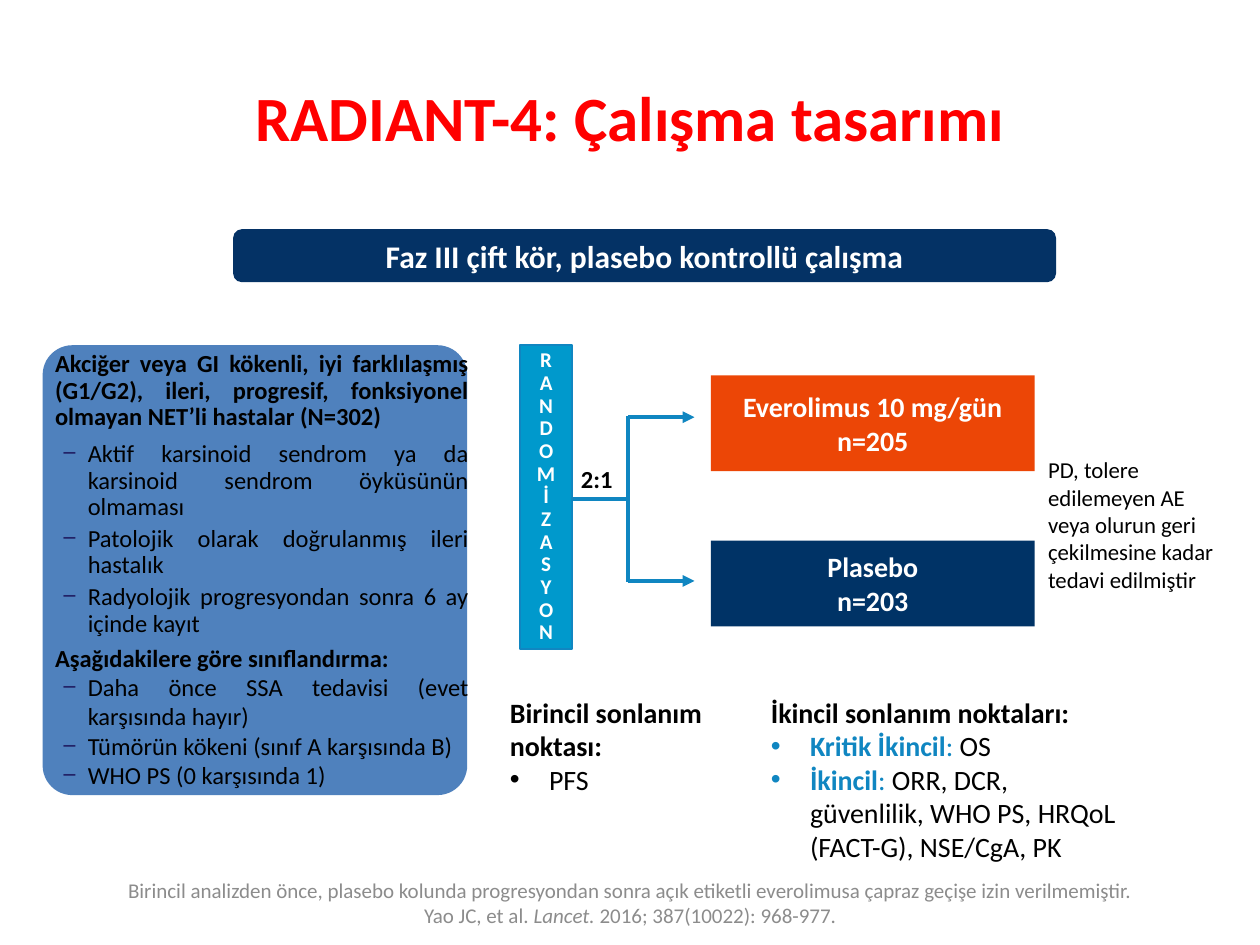
import pptx
import pptx.util
import pptx.dml.color
import pptx.enum.shapes
import pptx.enum.text
import pptx.oxml.ns
from lxml import etree

Cm = pptx.util.Cm
Pt = pptx.util.Pt
ALIGN = pptx.enum.text.PP_ALIGN
ANCHOR = pptx.enum.text.MSO_ANCHOR
SHAPES = pptx.enum.shapes.MSO_SHAPE

COLOURS = {
    "title": "FF0000", "text": "000000", "white": "FFFFFF", "grey": "8C8C8C",
    "panel": "4F81BD", "banner": "043265", "active": "EC4606",
    "placebo": "003366", "random": "0099CC", "line": "1086C1", "dash": "222267",
}


def colour(name):
    return pptx.dml.color.RGBColor.from_string(COLOURS[name])


def set_attributes(target, values):
    for name, value in values.items():
        setattr(target, name, value)


def set_indent(paragraph, left, hanging, bullet=None, bullet_colour="text"):
    """Hanging indent in cm, with an optional bullet character."""
    properties = paragraph._p.get_or_add_pPr()
    properties.set("marL", str(int(Cm(left))))
    properties.set("indent", str(-int(Cm(hanging))))
    if bullet:
        tag = pptx.oxml.ns.qn
        holder = etree.SubElement(properties, tag("a:buClr"))
        etree.SubElement(holder, tag("a:srgbClr"), val=COLOURS[bullet_colour])
        etree.SubElement(properties, tag("a:buFont"), typeface="Arial")
        etree.SubElement(properties, tag("a:buChar"), char=bullet)


def add_run(paragraph, text, size, name="text", **font):
    """Add a run; a newline in the text becomes a line break."""
    for index, line in enumerate(text.split("\n")):
        if index:
            paragraph.add_line_break()
        run = paragraph.add_run()
        run.text = line
        set_attributes(run.font, {"name": "Calibri", "size": Pt(size), **font})
        run.font.color.rgb = colour(name)


def fill_text(shape, paragraphs, size, name="text", anchor=ANCHOR.TOP, wrap=True):
    """Each paragraph is (runs, format, indent); each run is (text, font)."""
    frame = shape.text_frame
    set_attributes(frame, {"word_wrap": wrap, "vertical_anchor": anchor})
    for index, (runs, layout, indent) in enumerate(paragraphs):
        paragraph = frame.add_paragraph() if index else frame.paragraphs[0]
        if indent:
            set_indent(paragraph, *indent)
        set_attributes(paragraph, layout)
        for text, font in runs:
            add_run(paragraph, text, size, **{"name": name, **font})


def centred(text, bold=True):
    return [([(text, {"bold": bold})], {"alignment": ALIGN.CENTER}, None)]


def add_text(slide, box, paragraphs, size, **options):
    shape = slide.shapes.add_textbox(*map(Cm, box))
    fill_text(shape, paragraphs, size, **options)


def add_box(slide, box, fill, kind=SHAPES.RECTANGLE):
    shape = slide.shapes.add_shape(kind, *map(Cm, box))
    shape.shadow.inherit = False
    shape.fill.solid()
    shape.fill.fore_color.rgb = colour(fill)
    shape.line.fill.background()
    return shape


def add_line(slide, start, end, arrow=False):
    connector = slide.shapes.add_connector(
        pptx.enum.shapes.MSO_CONNECTOR.STRAIGHT, *map(Cm, start + end))
    connector.line.width = Pt(2.25)
    connector.line.color.rgb = colour("line")
    tag = pptx.oxml.ns.qn
    if arrow:
        etree.SubElement(connector.line._get_or_add_ln(), tag("a:tailEnd"),
                         type="triangle")
    etree.SubElement(connector._element.spPr, tag("a:effectLst"))


def add_title(slide):
    title = slide.shapes.title
    set_attributes(title, {"left": Cm(1.27), "top": Cm(0.76),
                           "width": Cm(22.86), "height": Cm(3.18)})
    fill_text(title, centred("RADIANT-4: Çalışma tasarımı"), 36, "title",
              ANCHOR.MIDDLE)


def add_patients(slide):
    panel = add_box(slide, (0.86, 6.96, 8.56, 9.07), "panel",
                    SHAPES.ROUNDED_RECTANGLE)
    panel.adjustments[0] = 0.07
    justified = {"alignment": ALIGN.JUSTIFY}
    tight = {**justified, "line_spacing": 0.9}
    dash = (0.66, 0.51, "−", "dash")
    sections = [
        ("Akciğer veya GI kökenli, iyi farklılaşmış (G1/G2), ileri, progresif, "
         "fonksiyonel olmayan NET’li hastalar (N=302)",
         {**tight, "space_after": Pt(6)}, {**tight, "space_after": Pt(3)},
         ["Aktif karsinoid sendrom ya da karsinoid sendrom öyküsünün olmaması",
          "Patolojik olarak doğrulanmış ileri hastalık",
          "Radyolojik progresyondan sonra 6 ay içinde kayıt"]),
        ("Aşağıdakilere göre sınıflandırma:", justified, justified,
         ["Daha önce SSA tedavisi (evet karşısında hayır)",
          "Tümörün kökeni (sınıf A karşısında B)",
          "WHO PS (0 karşısında 1)"]),
    ]
    paragraphs = []
    for heading, heading_format, item_format, items in sections:
        paragraphs.append(([(heading, {"bold": True})], heading_format, None))
        paragraphs += [([(item, {})], {**item_format, "level": 1}, dash)
                       for item in items]
    add_text(slide, (0.86, 6.96, 8.84, 9.17), paragraphs, 14)


def add_design(slide):
    # Randomisation bar, one letter per paragraph
    bar = add_box(slide, (10.49, 6.96, 1.04, 6.12), "random")
    bar.line.color.rgb = colour("line")
    bar.line.width = Pt(1)
    letters = [([(letter, {"bold": True})],
                {"alignment": ALIGN.CENTER, "line_spacing": 0.9}, None)
               for letter in "RANDOMİZASYON"]
    fill_text(bar, letters, 12, "white", ANCHOR.MIDDLE)

    # Branching lines
    branch, upper, lower, middle = 12.66, 8.41, 11.71, 10.06
    add_line(slide, (11.56, middle), (branch, middle))
    add_line(slide, (branch, upper - 0.03), (branch, lower + 0.03))
    for height in (upper, lower):
        add_line(slide, (branch, height), (14, height), arrow=True)
    add_text(slide, (11.46, 9.22, 1.17, 0.86), [([("2:1", {"bold": True})], {}, None)],
             14, wrap=False)

    # Treatment arms
    for text, top, height, fill in (("Everolimus 10 mg/gün\nn=205", 7.57, 1.93, "active"),
                                    ("Plasebo\nn=203", 10.9, 1.73, "placebo")):
        arm = add_box(slide, (14.33, top, 6.53, height), fill)
        fill_text(arm, centred(text), 16, "white", ANCHOR.MIDDLE)
    add_text(slide, (20.88, 9.07, 3.84, 3.58),
             [([("PD, tolere edilemeyen AE veya olurun geri çekilmesine kadar "
                 "tedavi edilmiştir", {})], {}, None)], 13)


def add_endpoints(slide):
    heading = (0.33, 0.33)
    bold = {"bold": True}
    accent = {"name": "line"}
    add_text(slide, (10.03, 13.89, 7.26, 2.31), [
        ([("Birincil sonlanım", bold)], {}, heading),
        ([("noktası:", bold)], {}, heading),
        ([("PFS", {})], {}, (0.79, 0.79, "•")),
    ], 16)
    secondary = [("Kritik İkincil", "OS"),
                 ("İkincil", "ORR, DCR,\ngüvenlilik, WHO PS, HRQoL\n(FACT-G), NSE/CgA, PK")]
    paragraphs = [([("İkincil sonlanım noktaları:", bold)], {}, heading)]
    paragraphs += [([(label, {**accent, **bold}), (": ", accent), (text, {})],
                    {}, (0.79, 0.79, "•", "line")) for label, text in secondary]
    add_text(slide, (15.29, 13.89, 9.6, 3.68), paragraphs, 16)


def add_footnote(slide):
    runs = [("Birincil analizden önce, plasebo kolunda progresyondan sonra açık "
             "etiketli everolimusa çapraz geçişe izin verilmemiştir.\n"
             "Yao JC, et al. ", {}),
            ("Lancet.", {"italic": True}),
            (" 2016; 387(10022): 968-977.", {})]
    add_text(slide, (1.3, 17.73, 22.81, 0.94),
             [(runs, {"alignment": ALIGN.CENTER}, None)], 12,
             name="grey", anchor=ANCHOR.MIDDLE)


def add_banner(slide):
    banner = add_box(slide, (4.7, 4.62, 16.59, 1.07), "banner",
                     SHAPES.ROUNDED_RECTANGLE)
    fill_text(banner, centred("Faz III çift kör, plasebo kontrollü çalışma"), 18,
              "white", ANCHOR.MIDDLE, wrap=False)


def main():
    presentation = pptx.Presentation()
    presentation.slide_width = Cm(25.4)
    presentation.slide_height = Cm(19.05)
    slide = presentation.slides.add_slide(presentation.slide_layouts[5])
    for add_part in (add_title, add_banner, add_patients, add_design,
                     add_endpoints, add_footnote):
        add_part(slide)
    presentation.save("out.pptx")


if __name__ == "__main__":
    main()
